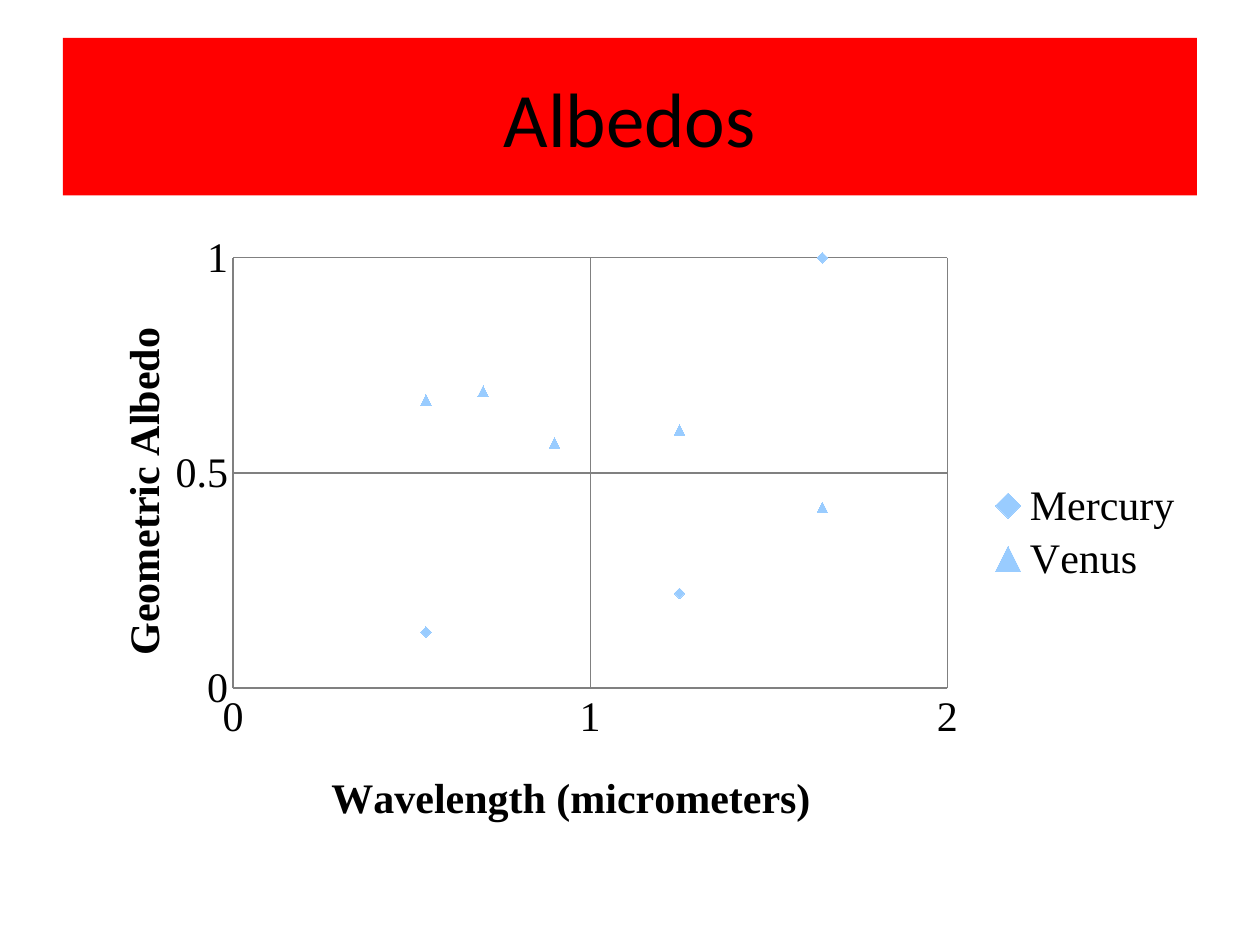
from lxml import etree
from pptx import Presentation
from pptx.chart.data import XyChartData
from pptx.dml.color import RGBColor
from pptx.enum import chart as ch, shapes, text
from pptx.oxml.ns import qn
from pptx.util import Pt

HUES = {"banner": "FF0000", "text": "000000", "mark": "99CCFF", "line": "808080"}
TITLE = "Albedos"
WAVES = [0.54, 0.7, 0.9, 1.25, 1.65]
PLANETS = [
    ("Mercury", [0.13, None, None, 0.22, 1], ch.XL_MARKER_STYLE.DIAMOND),
    ("Venus", [0.67, 0.69, 0.57, 0.6, 0.42], ch.XL_MARKER_STYLE.TRIANGLE),
]
# title, maximum, major unit, title place, title turn
AXES = [
    ("Wavelength (micrometers)", 2, 1, {"x": 0.23, "y": 0.87}, 0),
    ("Geometric Albedo", 1, 0.5, {"x": 0.04, "y": 0.16}, -90),
]
PLOT = {"x": 0.15, "y": 0.06, "w": 0.63, "h": 0.69}
KEY = {"x": 0.82, "y": 0.41, "w": 0.17, "h": 0.18}


def hue(name):
    return RGBColor.from_string(HUES[name])


def style(font, size, face, bold=False):
    for key, val in {"size": Pt(size), "name": face, "bold": bold}.items():
        setattr(font, key, val)
    font.color.rgb = hue("text")


def place(node, spot, index, inner=False):
    """Give a chart element a manual layout, in fractions of the chart."""
    for old in node.findall(qn("c:layout")):
        node.remove(old)
    layout = etree.Element(qn("c:layout"))
    node.insert(index, layout)
    manual = etree.SubElement(layout, qn("c:manualLayout"))
    items = [("layoutTarget", "inner")] if inner else []
    items += [("xMode", "edge"), ("yMode", "edge"), *spot.items()]
    for tag, val in items:
        etree.SubElement(manual, qn("c:" + tag)).set("val", str(val))


def add_banner(slide):
    box = slide.shapes.add_shape(
        shapes.MSO_SHAPE.RECTANGLE, Pt(36), Pt(21.6), Pt(648), Pt(90))
    box.shadow.inherit = False
    box.fill.solid()
    box.fill.fore_color.rgb = hue("banner")
    box.line.fill.background()
    frame = box.text_frame
    frame.vertical_anchor = text.MSO_ANCHOR.MIDDLE
    para = frame.paragraphs[0]
    para.alignment = text.PP_ALIGN.CENTER
    run = para.add_run()
    run.text = TITLE
    style(run.font, 44, "Calibri")


def style_axis(axis, name, top, step, spot, turn):
    looks = {
        "minimum_scale": 0, "maximum_scale": top, "major_unit": step,
        "has_major_gridlines": True,
        "major_tick_mark": ch.XL_TICK_MARK.NONE,
        "minor_tick_mark": ch.XL_TICK_MARK.NONE,
    }
    for key, val in looks.items():
        setattr(axis, key, val)
    axis.tick_labels.number_format = "General"
    axis.tick_labels.number_format_is_linked = False
    style(axis.tick_labels.font, 24, "Times New Roman")
    for item in (axis, axis.major_gridlines):
        item.format.line.color.rgb = hue("line")
        item.format.line.width = Pt(0.75)
    title = axis.axis_title
    frame = title.text_frame
    run = frame.paragraphs[0].add_run()
    run.text = name
    style(run.font, 24, "Times New Roman", True)
    body = frame._txBody.find(qn("a:bodyPr"))
    body.set("rot", str(turn * 60000))
    body.set("vert", "horz")
    place(title._element, spot, 1)


def add_plot(slide):
    data = XyChartData()
    for name, vals, _ in PLANETS:
        row = data.add_series(name)
        for wave, val in zip(WAVES, vals):
            row.add_data_point(wave, val)
    chart = slide.shapes.add_chart(
        ch.XL_CHART_TYPE.XY_SCATTER, Pt(36), Pt(126), Pt(648), Pt(356.4), data).chart
    style(chart.font, 10, "Calibri")
    chart.has_title = False
    chart.plots[0].vary_by_categories = False
    root = chart._chartSpace
    for point in list(root.iter(qn("c:pt"))):
        if point.findtext(qn("c:v")) in ("None", ""):
            point.getparent().remove(point)

    for row, (_, _, shape) in zip(chart.plots[0].series, PLANETS):
        row.smooth = False
        row.format.line.fill.background()
        mark = row.marker
        mark.style, mark.size = shape, 6
        mark.format.fill.solid()
        mark.format.fill.fore_color.rgb = hue("mark")
        mark.format.line.fill.background()

    for axis, looks in zip((chart.category_axis, chart.value_axis), AXES):
        style_axis(axis, *looks)

    chart.has_legend = True
    key = chart.legend
    key.position = ch.XL_LEGEND_POSITION.RIGHT
    key.include_in_layout = False
    style(key.font, 24, "Times New Roman")
    place(key._element, KEY, 1)
    place(root.find(".//" + qn("c:plotArea")), PLOT, 0, inner=True)


def main():
    deck = Presentation()
    deck.slide_width, deck.slide_height = Pt(720), Pt(540)
    slide = deck.slides.add_slide(deck.slide_layouts[6])
    add_banner(slide)
    add_plot(slide)
    deck.save("out.pptx")


if __name__ == "__main__":
    main()
